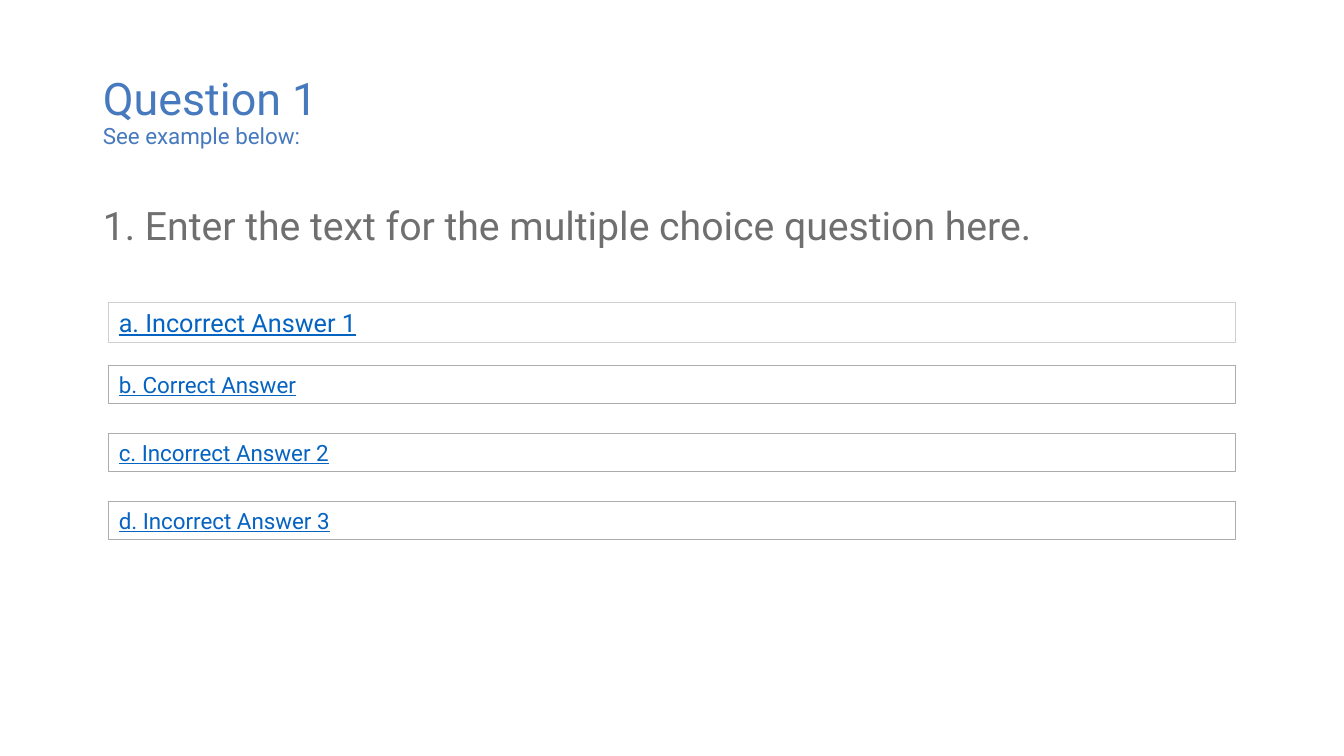
from pptx import Presentation
from pptx.dml.color import RGBColor
from pptx.enum.shapes import MSO_SHAPE as Shape
from pptx.enum.text import MSO_ANCHOR as Anchor, MSO_AUTO_SIZE as AutoSize, PP_ALIGN as Align
from pptx.oxml.ns import qn
from pptx.util import Inches, Pt

COLORS = {
    "heading": "4679BD",
    "question": "6E6F6E",
    "answer": "0563C1",
    "first_border": "D0CECE",
    "border": "AFABAB",
    "paper": "FFFFFF",
}
FONT = "Roboto"
ANSWERS = ["a. Incorrect Answer 1", "b. Correct Answer",
           "c. Incorrect Answer 2", "d. Incorrect Answer 3"]


def color(name):
    return RGBColor.from_string(COLORS[name])


def add_run(paragraph, text, size, color_name, underline=None):
    run = paragraph.add_run()
    run.text = text
    run.font.name = FONT
    run.font.size = Pt(size)
    run.font.color.rgb = color(color_name)
    run.font.underline = underline


def place(placeholder, box, anchor):
    """Move a placeholder to its box and return its first paragraph."""
    left, top, width, height = map(Inches, box)
    placeholder.left, placeholder.top = left, top
    placeholder.width, placeholder.height = width, height
    frame = placeholder.text_frame
    frame.word_wrap = True
    frame.auto_size = AutoSize.NONE
    frame.vertical_anchor = anchor
    paragraph = frame.paragraphs[0]
    paragraph.alignment = Align.LEFT
    paragraph.line_spacing = 0.9
    paragraph.space_before = Pt(0)
    return paragraph


def add_heading(slide, box):
    heading = place(slide.shapes.title, box, Anchor.MIDDLE)
    add_run(heading, "Question 1", 32, "heading")
    heading.add_line_break()
    add_run(heading, "See example below:", 16, "heading")


def add_question(slide, box):
    question = place(slide.placeholders[1], box, Anchor.TOP)
    # Plain paragraph: no bullet, no hanging indent
    properties = question._p.get_or_add_pPr()
    properties.set("marL", "0")
    properties.set("indent", "0")
    properties.append(properties.makeelement(qn("a:buNone"), {}))
    add_run(question, "1. Enter the text for the multiple choice question here.",
            28, "question")


def add_answer(slide, box, text, size, border, filled):
    answer = slide.shapes.add_shape(Shape.RECTANGLE, *map(Inches, box))
    answer.shadow.inherit = False
    if filled:
        answer.fill.solid()
        answer.fill.fore_color.rgb = color("paper")
    else:
        answer.fill.background()
    answer.line.color.rgb = color(border)
    answer.line.width = Pt(0.75)
    frame = answer.text_frame
    frame.word_wrap = True
    frame.auto_size = AutoSize.SHAPE_TO_FIT_TEXT
    frame.vertical_anchor = Anchor.TOP
    frame.paragraphs[0].alignment = Align.LEFT
    add_run(frame.paragraphs[0], text, size, "answer", underline=True)


def add_answers(slide, box):
    left, top, width, height = box
    first, *others = ANSWERS
    # The first choice is larger and has a lighter border
    add_answer(slide, (left, top, width, 0.4), first, 18, "first_border", False)
    row_height = 0.37
    others_top = top + 0.63
    pitch = (top + height - row_height - others_top) / (len(others) - 1)
    for row, text in enumerate(others):
        add_answer(slide, (left, others_top + row * pitch, width, row_height),
                   text, 16, "border", True)


def main():
    deck = Presentation()
    deck.slide_width, deck.slide_height = Inches(13.33), Inches(7.5)
    slide = deck.slides.add_slide(deck.slide_layouts[1])
    add_heading(slide, (0.92, 0.4, 11.5, 1.45))
    add_question(slide, (0.92, 2, 11.5, 4.76))
    add_answers(slide, (1.08, 3, 11.17, 2.35))
    deck.save("out.pptx")


if __name__ == "__main__":
    main()
